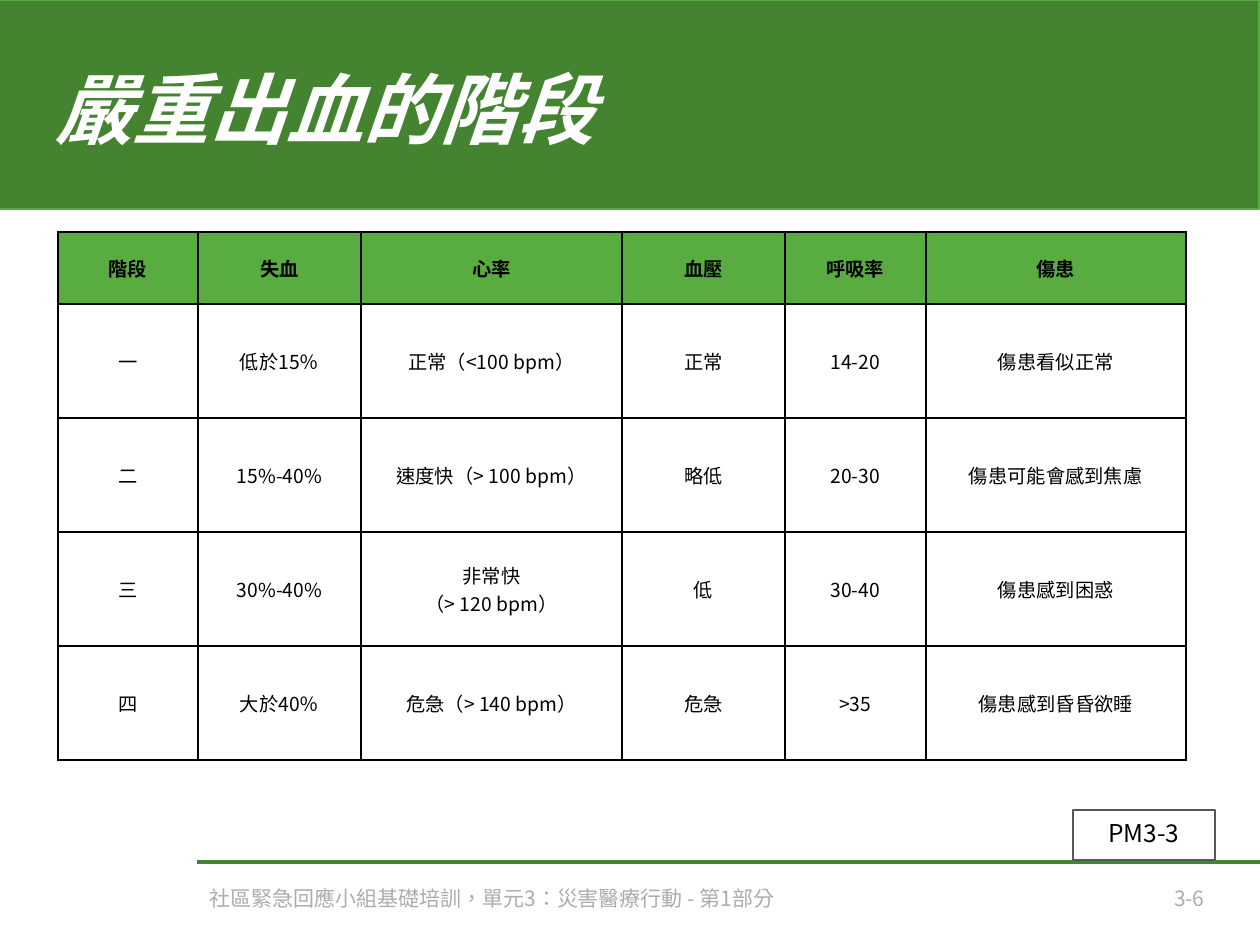
import pptx
import pptx.dml.color
import pptx.enum.lang
import pptx.enum.shapes
import pptx.enum.text
import pptx.oxml
import pptx.oxml.ns
import pptx.util

EMU_PER_PX = 914400 / 126
BODY_FONT = "Noto Sans CJK SC"
TITLE_FONT = "Noto Sans CJK TC"
DARK_GREEN, LIGHT_GREEN, HEADER_GREEN = "448431", "57AC40", "59AD40"
BLACK, WHITE, GREY, DARK_GREY = "000000", "FFFFFF", "AFABAB", "575757"
ALIGN = pptx.enum.text.PP_ALIGN
MIDDLE = pptx.enum.text.MSO_ANCHOR.MIDDLE

STAGES = [
    ["階段", "失血", "心率", "血壓", "呼吸率", "傷患"],
    ["一", "低於15％", "正常（<100 bpm）", "正常", "14-20", "傷患看似正常"],
    ["二", "15%-40%", "速度快（> 100 bpm）", "略低", "20-30", "傷患可能會感到焦慮"],
    ["三", "30%-40%", "非常快\n（> 120 bpm）", "低", "30-40", "傷患感到困惑"],
    ["四", "大於40％", "危急（> 140 bpm）", "危急", ">35", "傷患感到昏昏欲睡"],
]
COLUMN_WIDTHS = [140, 163, 261, 163, 141, 260]
ROW_HEIGHTS = [72] + [114] * 4


def px(length):
    return pptx.util.Emu(round(length * EMU_PER_PX))


def rgb(color):
    return pptx.dml.color.RGBColor.from_string(color)


def write(text_frame, text, size, color, align=ALIGN.LEFT, name=BODY_FONT,
          bold=False, italic=False, line_spacing=None):
    text_frame.text = text
    for paragraph in text_frame.paragraphs:
        paragraph.alignment = align
        paragraph.line_spacing = line_spacing
        for run in paragraph.runs:
            font = run.font
            font.size, font.bold, font.italic = pptx.util.Pt(size), bold, italic
            font.name = name
            font.color.rgb = rgb(color)
            font.language_id = pptx.enum.lang.MSO_LANGUAGE_ID.TRADITIONAL_CHINESE
            properties = run._r.get_or_add_rPr()
            east_asian = pptx.oxml.parse_xml(
                f'<a:ea {pptx.oxml.ns.nsdecls("a")} typeface="{name}"/>')
            properties.find(pptx.oxml.ns.qn("a:latin")).addnext(east_asian)


def add_text(slide, left, top, width, height, text, size, color, align=ALIGN.LEFT):
    box = slide.shapes.add_textbox(px(left), px(top), px(width), px(height))
    box.text_frame.word_wrap = True
    box.text_frame.vertical_anchor = MIDDLE
    write(box.text_frame, text, size, color, align, line_spacing=0.9)
    return box


def add_title_banner(slide, left, top, width, height):
    banner = slide.shapes.add_shape(pptx.enum.shapes.MSO_SHAPE.RECTANGLE,
                                    px(left), px(top), px(width), px(height))
    banner.shadow.inherit = False
    banner.fill.solid()
    banner.fill.fore_color.rgb = rgb(DARK_GREEN)
    banner.line.color.rgb = rgb(LIGHT_GREEN)
    banner.line.width = pptx.util.Pt(1)

    title = slide.shapes.title
    title.left, title.top = px(left + 44), px(top + 44)
    title.width, title.height = px(800), px(140)
    title.text_frame.vertical_anchor = MIDDLE
    title.text_frame.auto_size = pptx.enum.text.MSO_AUTO_SIZE.NONE
    write(title.text_frame, "嚴重出血的階段", 44, WHITE, name=TITLE_FONT,
          bold=True, italic=True, line_spacing=0.9)
    banner._element.addnext(title._element)


def add_cell_borders(cell):
    properties = cell._tc.get_or_add_tcPr()
    for position, side in enumerate(("lnL", "lnR", "lnT", "lnB")):
        properties.insert(position, pptx.oxml.parse_xml(
            f'<a:{side} {pptx.oxml.ns.nsdecls("a")} w="12700"><a:solidFill>'
            f'<a:srgbClr val="{BLACK}"/></a:solidFill></a:{side}>'))


def add_stage_table(slide, left, top):
    table = slide.shapes.add_table(
        len(ROW_HEIGHTS), len(COLUMN_WIDTHS), px(left), px(top),
        px(sum(COLUMN_WIDTHS)), px(sum(ROW_HEIGHTS))).table
    for column, width in zip(table.columns, COLUMN_WIDTHS):
        column.width = px(width)
    for row_index, (row, height) in enumerate(zip(table.rows, ROW_HEIGHTS)):
        row.height = px(height)
        is_header = row_index == 0
        for cell, text in zip(row.cells, STAGES[row_index]):
            cell.margin_left = cell.margin_right = px(5)
            cell.margin_top = cell.margin_bottom = 0
            cell.vertical_anchor = MIDDLE
            cell.fill.solid()
            cell.fill.fore_color.rgb = rgb(HEADER_GREEN if is_header else WHITE)
            write(cell.text_frame, text, 11, BLACK, ALIGN.CENTER, bold=is_header)
            add_cell_borders(cell)


def add_footer(slide, left, top, width):
    rule = slide.shapes.add_connector(pptx.enum.shapes.MSO_CONNECTOR.STRAIGHT,
                                      px(left), px(top), px(left + width), px(top))
    rule.line.color.rgb = rgb(DARK_GREEN)
    rule.line.width = pptx.util.Pt(2.04)
    rule._element.spPr.append(pptx.oxml.parse_xml(
        f'<a:effectLst {pptx.oxml.ns.nsdecls("a")}/>'))

    add_text(slide, left, top + 17, 635, 42,
             "社區緊急回應小組基礎培訓，單元3：災害醫療行動 - 第1部分", 12, GREY)
    add_text(slide, left + 772, top + 17, 248, 42, "3-6", 12, GREY, ALIGN.RIGHT)
    page_reference = add_text(slide, left + 876, top - 52, 142, 50,
                              "PM3-3", 14, BLACK, ALIGN.CENTER)
    page_reference.line.color.rgb = rgb(DARK_GREY)
    page_reference.line.width = pptx.util.Pt(0.75)


def main():
    presentation = pptx.Presentation()
    presentation.slide_width, presentation.slide_height = px(1260), px(945)
    slide = presentation.slides.add_slide(presentation.slide_layouts[5])
    add_title_banner(slide, -1, 0, 1260, 209)
    add_stage_table(slide, 58, 232)
    add_footer(slide, 197, 862, 1063)
    presentation.save("out.pptx")


if __name__ == "__main__":
    main()
